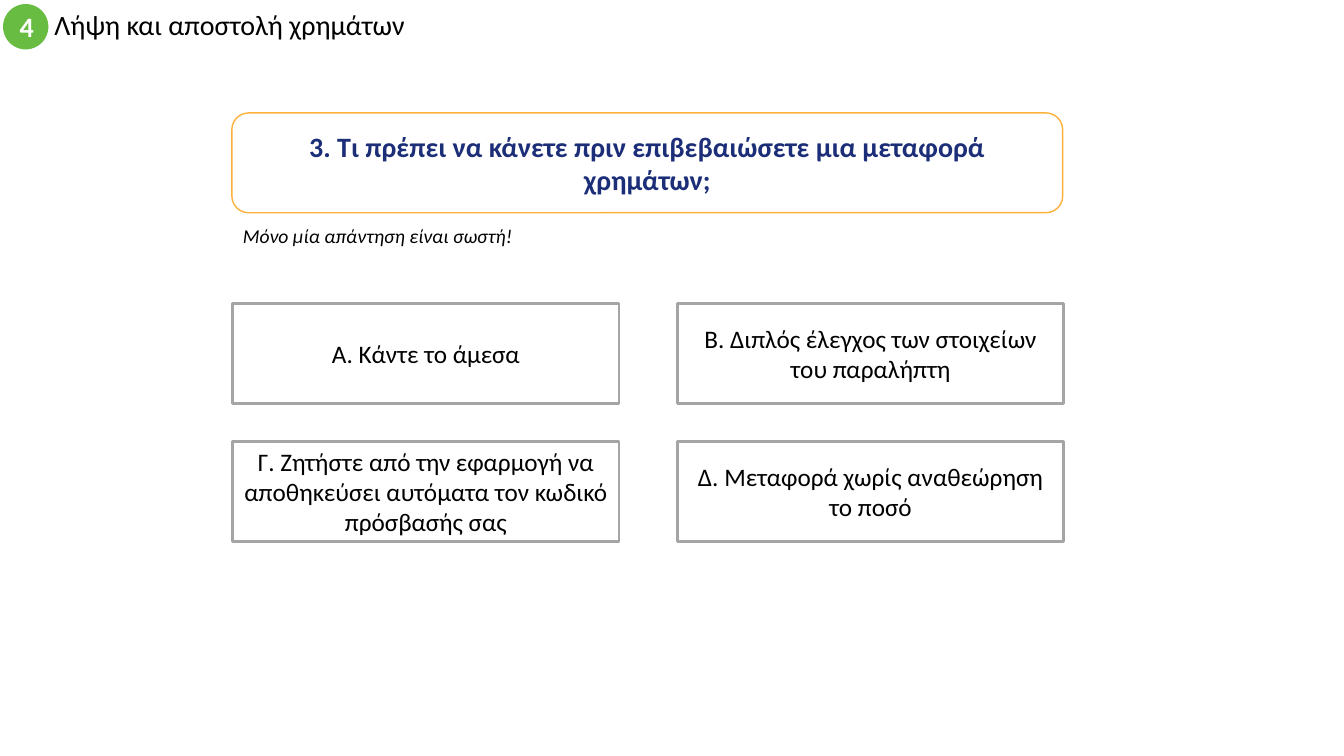
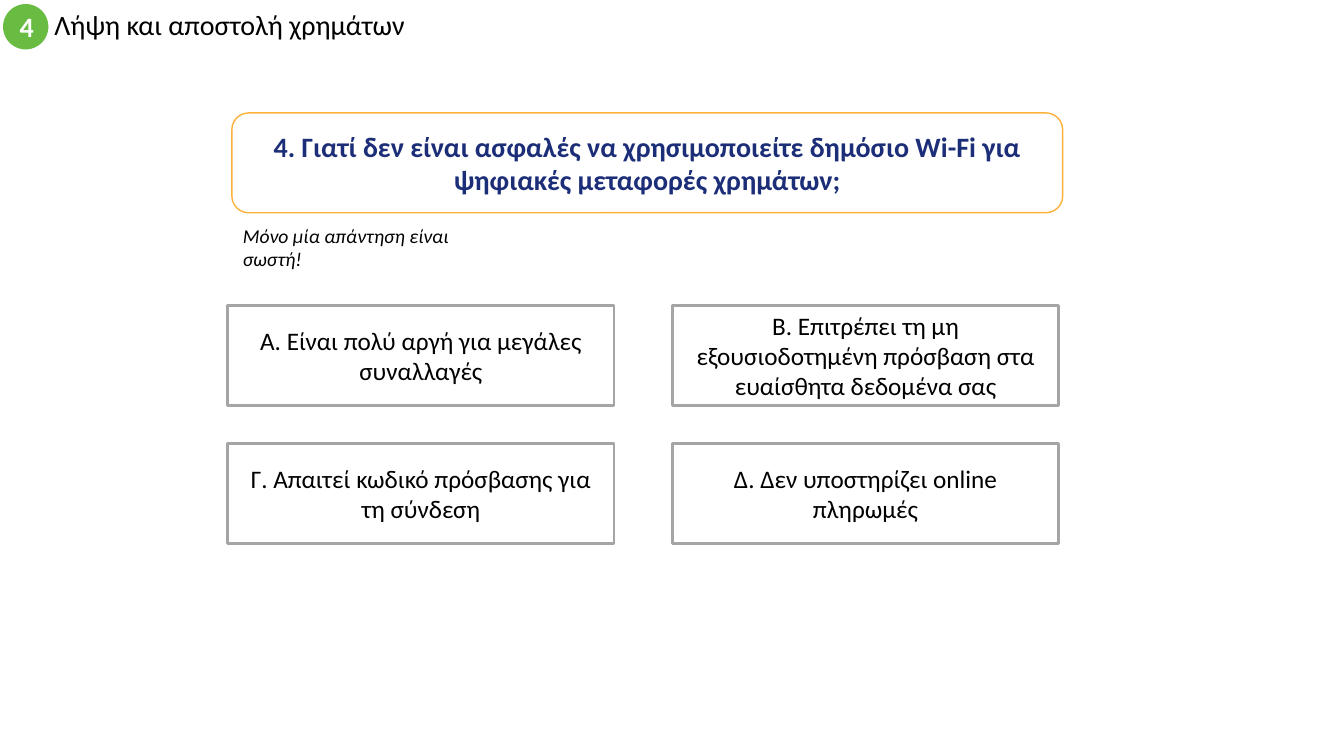
from pptx import Presentation
from pptx.dml.color import RGBColor
from pptx.enum.shapes import MSO_SHAPE as Shape
from pptx.enum.text import MSO_ANCHOR as Anchor, MSO_AUTO_SIZE as AutoSize, PP_ALIGN as Align
from pptx.util import Inches, Pt

WHITE = RGBColor(0xFF, 0xFF, 0xFF)
BLACK = RGBColor(0x00, 0x00, 0x00)
GREEN = RGBColor(0x68, 0xBC, 0x42)
ORANGE = RGBColor(0xFC, 0xB1, 0x3A)
NAVY = RGBColor(0x1C, 0x2E, 0x78)
GREY = RGBColor(0xA5, 0xA5, 0xA5)
FONT = "Calibri"

SECTION_NUMBER = "4"
SECTION_TITLE = "Λήψη και αποστολή χρημάτων"
HINT = "Μόνο μία απάντηση είναι σωστή!"

QUESTIONS = [
    {
        "question": "3. Τι πρέπει να κάνετε πριν επιβεβαιώσετε μια μεταφορά χρημάτων;",
        "answers": [
            "A. Κάντε το άμεσα",
            "B. Διπλός έλεγχος των στοιχείων του παραλήπτη",
            "Γ. Ζητήστε από την εφαρμογή να αποθηκεύσει αυτόματα τον κωδικό πρόσβασής σας",
            "Δ. Μεταφορά χωρίς αναθεώρηση\vτο ποσό",
        ],
        "hint_width": 3.21,
        "grid_origin": (2.31, 3.01),
    },
    {
        "question": "4. Γιατί δεν είναι ασφαλές να χρησιμοποιείτε δημόσιο Wi-Fi για "
                    "ψηφιακές μεταφορές χρημάτων;",
        "answers": [
            "A. Είναι πολύ αργή για μεγάλες συναλλαγές",
            "B. Επιτρέπει τη μη εξουσιοδοτημένη πρόσβαση στα ευαίσθητα δεδομένα σας",
            "Γ. Απαιτεί κωδικό πρόσβασης για τη σύνδεση",
            "Δ. Δεν υποστηρίζει online πληρωμές",
        ],
        "hint_width": 2.36,
        "grid_origin": (2.26, 3.03),
    },
]

GRID_COLUMNS = 2
ANSWER_WIDTH, ANSWER_HEIGHT = 3.83, 0.99
COLUMN_STEP, ROW_STEP = 4.41, 1.37


def write(box, text, size, color=BLACK, align=Align.LEFT, anchor=Anchor.MIDDLE,
          bold=False, italic=False):
    frame = box.text_frame
    frame.word_wrap = True
    frame.vertical_anchor = anchor
    para = frame.paragraphs[0]
    para.text = text
    para.alignment = align
    font = para.font
    font.name, font.size, font.color.rgb = FONT, Pt(size), color
    font.bold, font.italic = bold, italic
    return para


def add_panel(page, kind, area, fill, line=None, line_width=1):
    panel = page.shapes.add_shape(kind, *map(Inches, area))
    panel.shadow.inherit = False
    panel.fill.solid()
    panel.fill.fore_color.rgb = fill
    if line is None:
        panel.line.fill.background()
    else:
        panel.line.color.rgb = line
        panel.line.width = Pt(line_width)
    return panel


def add_label(page, area):
    return page.shapes.add_textbox(*map(Inches, area))


def add_section_header(page):
    badge = add_panel(page, Shape.OVAL, (0.03, 0.04, 0.45, 0.45), GREEN)
    write(badge, SECTION_NUMBER, 20, WHITE, Align.CENTER, bold=True)
    title = add_label(page, (0.44, 0.04, 8, 0.45))
    write(title, SECTION_TITLE, 20).line_spacing = 0.9


def add_question(page, question, hint_width):
    banner = add_panel(page, Shape.ROUNDED_RECTANGLE, (2.3, 1.12, 8.24, 0.99), WHITE, ORANGE)
    write(banner, question, 20, NAVY, Align.CENTER, bold=True)
    hint = add_label(page, (2.31, 2.17, hint_width, 0.34))
    write(hint, HINT, 14, anchor=Anchor.TOP, italic=True)
    hint.text_frame.auto_size = AutoSize.SHAPE_TO_FIT_TEXT


def add_answers(page, answers, origin):
    left, top = origin
    for index, answer in enumerate(answers):
        row, column = divmod(index, GRID_COLUMNS)
        area = (left + column * COLUMN_STEP, top + row * ROW_STEP, ANSWER_WIDTH, ANSWER_HEIGHT)
        box = add_panel(page, Shape.RECTANGLE, area, WHITE, GREY, 2)
        write(box, answer, 18, align=Align.CENTER)


def main():
    deck = Presentation()
    deck.slide_width, deck.slide_height = Inches(13.33), Inches(7.5)
    blank = deck.slide_layouts[6]
    for item in QUESTIONS:
        page = deck.slides.add_slide(blank)
        add_section_header(page)
        add_question(page, item["question"], item["hint_width"])
        add_answers(page, item["answers"], item["grid_origin"])
    deck.save("out.pptx")


if __name__ == "__main__":
    main()
